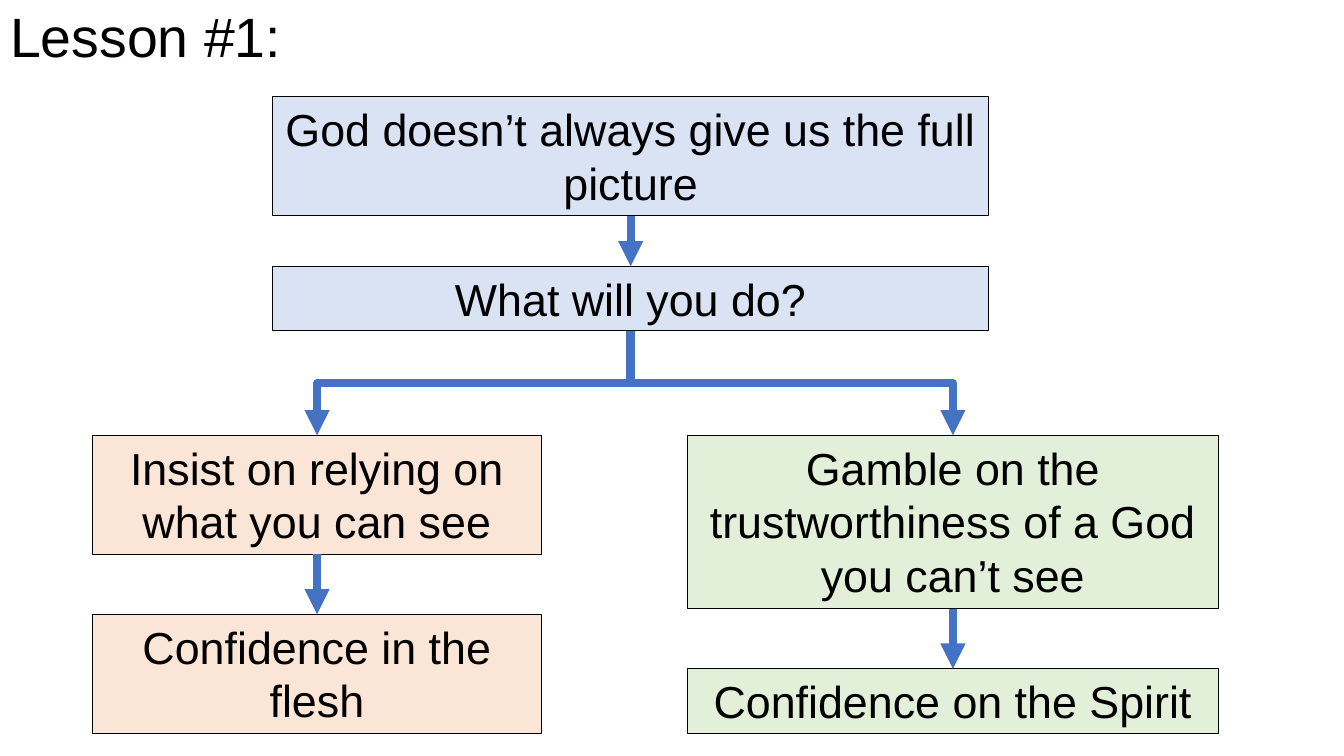
from lxml import etree
from pptx import Presentation
from pptx import util as u
from pptx.dml.color import RGBColor
from pptx.enum import shapes, text
from pptx.oxml.ns import qn

TITLE = "Lesson #1:"
FONT = "Arial"
BLACK, ARROW_BLUE = "000000", "4472C4"
LINE_HEIGHT, BOX_PADDING = 1.37, 0.26
BOTTOM_SITE, TOP_SITE = 2, 0

# Each column: left, top, width, gap, fill, boxes as (text, number of lines)
COLUMNS = {
    "question": (6.88, 2.44, 18.03, 1.27, "DAE3F3", [
        ("God doesn’t always give us the full picture", 2),
        ("What will you do?", 1),
    ]),
    "sight": (2.34, 10.97, 11.3, 1.51, "FBE5D6", [
        ("Insist on relying on what you can see", 2),
        ("Confidence in the flesh", 2),
    ]),
    "faith": (17.32, 10.97, 13.39, 1.51, "E2F0D9", [
        ("Gamble on the trustworthiness of a God you can’t see", 3),
        ("Confidence on the Spirit", 1),
    ]),
}


def color(value):
    return RGBColor.from_string(value)


def format_text(shape, size, alignment):
    paragraph = shape.text_frame.paragraphs[0]
    paragraph.alignment = alignment
    font = paragraph.runs[0].font
    font.name, font.size = FONT, u.Pt(size)
    font.color.rgb = color(BLACK)
    return paragraph


def add_box(slide, label, left, top, width, height, fill):
    box = slide.shapes.add_shape(shapes.MSO_SHAPE.RECTANGLE, u.Cm(left), u.Cm(top),
                                 u.Cm(width), u.Cm(height))
    box.shadow.inherit = False
    box.fill.solid()
    box.fill.fore_color.rgb = color(fill)
    box.line.color.rgb = color(BLACK)
    box.line.width = u.Pt(0.75)
    frame = box.text_frame
    frame.text = label
    frame.word_wrap = True
    frame.auto_size = text.MSO_AUTO_SIZE.SHAPE_TO_FIT_TEXT
    frame.vertical_anchor = text.MSO_ANCHOR.TOP
    format_text(box, 32, text.PP_ALIGN.CENTER)
    return box


def add_column(slide, left, top, width, gap, fill, entries):
    boxes = []
    for label, lines in entries:
        height = BOX_PADDING + lines * LINE_HEIGHT
        boxes.append(add_box(slide, label, left, top, width, height, fill))
        top += height + gap
    return boxes


def turn_elbow(connector):
    """Rotate an elbow so that it leaves and arrives vertically."""
    goes_right = connector.end_x > connector.begin_x
    left, top = connector.left, connector.top
    width, height = connector.width, connector.height
    connector.left = left + (width - height) // 2
    connector.top = top + (height - width) // 2
    connector.width, connector.height = height, width
    frame = connector._element.spPr.find(qn("a:xfrm"))
    frame.set("rot", str((270 if goes_right else 90) * 60000))
    frame.set("flipH", "1" if goes_right else "0")


def add_arrow(slide, source, target, kind=shapes.MSO_CONNECTOR.STRAIGHT):
    connector = slide.shapes.add_connector(kind, 0, 0, 0, 0)
    connector.begin_connect(source, BOTTOM_SITE)
    connector.end_connect(target, TOP_SITE)
    if kind == shapes.MSO_CONNECTOR.ELBOW:
        turn_elbow(connector)
    connector.line.color.rgb = color(ARROW_BLUE)
    connector.line.width = u.Pt(6)
    properties = connector._element.spPr
    etree.SubElement(properties.find(qn("a:ln")), qn("a:tailEnd"), type="triangle")
    etree.SubElement(properties, qn("a:effectLst"))


def main():
    presentation = Presentation()
    presentation.slide_width, presentation.slide_height = u.Cm(33.87), u.Cm(19.05)
    slide = presentation.slides.add_slide(presentation.slide_layouts[5])

    title = slide.shapes.title
    title.left, title.top, title.width, title.height = map(u.Cm, (0, 0.28, 8.48, 1.45))
    title.text_frame.text = TITLE
    title.text_frame.auto_size = text.MSO_AUTO_SIZE.NONE
    title.text_frame.vertical_anchor = text.MSO_ANCHOR.MIDDLE
    format_text(title, 39.6, text.PP_ALIGN.LEFT).line_spacing = 0.9

    columns = {name: add_column(slide, *column) for name, column in COLUMNS.items()}
    for first, second in columns.values():
        add_arrow(slide, first, second)
    for choice in ("sight", "faith"):
        add_arrow(slide, columns["question"][-1], columns[choice][0],
                  shapes.MSO_CONNECTOR.ELBOW)

    presentation.save("out.pptx")


if __name__ == "__main__":
    main()
